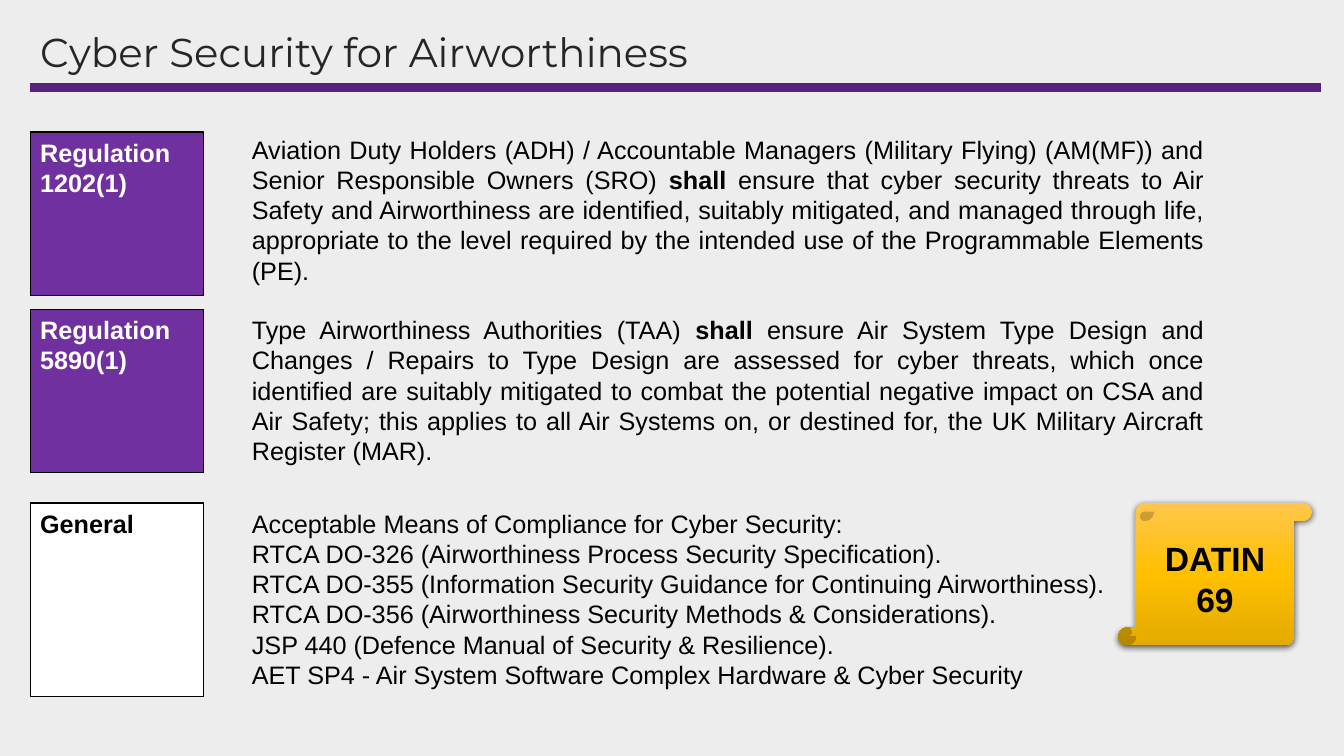
from dataclasses import dataclass

from pptx import Presentation
from pptx.dml.color import RGBColor as Rgb
from pptx.enum.shapes import MSO_CONNECTOR as Conn, MSO_SHAPE as Geo
from pptx.enum.text import MSO_ANCHOR as Anchor, MSO_AUTO_SIZE as Auto, PP_ALIGN as Align
from pptx.oxml import parse_xml
from pptx.oxml.ns import nsdecls
from pptx.shapes.autoshape import Shape
from pptx.slide import Slide
from pptx.util import Inches, Pt


@dataclass(frozen=True)
class Theme:
    back: str = "EDEDED"
    rule: str = "56227D"
    title: str = "262626"
    purple: str = "7030A0"
    white: str = "FFFFFF"
    black: str = "000000"
    gold: tuple[tuple[int, str], ...] = ((0, "FFC64B"), (50, "FFC000"), (100, "E3AB00"))
    head: str = "Montserrat"
    body: str = "Arial"
    big: float = 28.8
    mid: float = 24
    base: float = 18


@dataclass(frozen=True)
class Run:
    text: str
    bold: bool = False


@dataclass(frozen=True)
class Row:
    label: str
    fill: str
    ink: str
    top: float
    tall: float
    text_top: float
    text_wide: float
    text_tall: float
    paras: list[list[Run]]


THEME = Theme()
LEFT, TAG_WIDE, TEXT_LEFT, FULL = 0.3, 1.72, 2.4, 12.8

ROWS = [
    Row("Regulation 1202(1)", THEME.purple, THEME.white, 1.31, 1.62, 1.28, 9.64, 1.62, [[
        Run("Aviation Duty Holders (ADH) / Accountable Managers (Military Flying) (AM(MF)) "
            "and Senior Responsible Owners (SRO) "),
        Run("shall", True),
        Run(" ensure that cyber security threats to Air Safety and Airworthiness are "
            "identified, suitably mitigated, and managed through life, appropriate to the "
            "level required by the intended use of the Programmable Elements (PE)."),
    ]]),
    Row("Regulation 5890(1)", THEME.purple, THEME.white, 3.07, 1.62, 3.07, 9.64, 1.31, [[
        Run("Type Airworthiness Authorities (TAA) "),
        Run("shall", True),
        Run(" ensure Air System Type Design and Changes / Repairs to Type Design are "
            "assessed for cyber threats, which once identified are suitably mitigated to "
            "combat the potential negative impact on CSA and Air Safety; this applies to "
            "all Air Systems on, or destined for, the UK Military Aircraft Register (MAR)."),
    ]]),
    Row("General", THEME.white, THEME.black, 4.99, 1.92, 4.99, 10.04, 1.92, [
        [Run(line)] for line in (
            "Acceptable Means of Compliance for Cyber Security:",
            "RTCA DO-326 (Airworthiness Process Security Specification).",
            "RTCA DO-355 (Information Security Guidance for Continuing Airworthiness).",
            "RTCA DO-356 (Airworthiness Security Methods & Considerations).",
            "JSP 440 (Defence Manual of Security & Resilience).",
            "AET SP4 - Air System Software Complex Hardware & Cyber Security",
        )
    ]),
]


def write(shape: Shape, paras: list[list[Run]], ink: str, size: float = THEME.base,
          face: str = THEME.body, align: Align = Align.LEFT,
          anchor: Anchor = Anchor.TOP, lines: float = 1.0) -> None:
    frame = shape.text_frame
    frame.word_wrap = True
    frame.vertical_anchor = anchor
    for i, runs in enumerate(paras):
        para = frame.add_paragraph() if i else frame.paragraphs[0]
        para.alignment = align
        para.line_spacing = lines
        for item in runs:
            run = para.add_run()
            run.text = item.text
            run.font.color.rgb = Rgb.from_string(ink)
            for key, value in {"name": face, "size": Pt(size), "bold": item.bold}.items():
                setattr(run.font, key, value)


def add_title(slide: Slide) -> None:
    line = slide.shapes.add_connector(
        Conn.STRAIGHT, Inches(LEFT), Inches(0.87), Inches(LEFT + FULL), Inches(0.87))
    line.line.color.rgb = Rgb.from_string(THEME.rule)
    line.line.width = Pt(6)
    line._element.spPr.append(parse_xml(f"<a:effectLst {nsdecls('a')}/>"))
    box = slide.shapes.add_textbox(Inches(LEFT), Inches(0.28), Inches(FULL), Inches(0.53))
    write(box, [[Run("Cyber Security for Airworthiness")]], THEME.title, THEME.big,
          THEME.head, anchor=Anchor.MIDDLE, lines=0.9)


def add_row(slide: Slide, row: Row) -> None:
    tag = slide.shapes.add_shape(
        Geo.RECTANGLE, Inches(LEFT), Inches(row.top), Inches(TAG_WIDE), Inches(row.tall))
    tag.shadow.inherit = False
    tag.fill.solid()
    tag.fill.fore_color.rgb = Rgb.from_string(row.fill)
    tag.line.color.rgb = Rgb.from_string(THEME.black)
    tag.line.width = Pt(1)
    write(tag, [[Run(row.label, True)]], row.ink)
    box = slide.shapes.add_textbox(Inches(TEXT_LEFT), Inches(row.text_top),
                                   Inches(row.text_wide), Inches(row.text_tall))
    write(box, row.paras, THEME.black, align=Align.JUSTIFY)
    box.text_frame.auto_size = Auto.SHAPE_TO_FIT_TEXT


def add_scroll(slide: Slide) -> None:
    """Add the gold notice scroll with its gradient and soft shadow."""
    scroll = slide.shapes.add_shape(
        Geo.VERTICAL_SCROLL, Inches(11.09), Inches(4.99), Inches(1.92), Inches(1.41))
    scroll.line.fill.background()
    stops = "".join(f'<a:gs pos="{pos * 1000}"><a:srgbClr val="{tint}"/></a:gs>'
                    for pos, tint in THEME.gold)
    props = scroll._element.spPr
    props.insert(2, parse_xml(
        f'<a:gradFill {nsdecls("a")} rotWithShape="1"><a:gsLst>{stops}</a:gsLst>'
        '<a:lin ang="5400000" scaled="0"/></a:gradFill>'))
    props.append(parse_xml(
        f'<a:effectLst {nsdecls("a")}><a:outerShdw blurRad="{Pt(4.5)}" dist="{Pt(1.5)}" '
        f'dir="5400000" algn="ctr" rotWithShape="0"><a:srgbClr val="{THEME.black}">'
        '<a:alpha val="63000"/></a:srgbClr></a:outerShdw></a:effectLst>'))
    write(scroll, [[Run("DATIN 69", True)]], THEME.black, THEME.mid,
          align=Align.CENTER, anchor=Anchor.MIDDLE)


def main() -> None:
    deck = Presentation()
    deck.slide_width, deck.slide_height = Inches(13.33), Inches(7.5)
    slide = deck.slides.add_slide(deck.slide_layouts[6])
    slide.background.fill.solid()
    slide.background.fill.fore_color.rgb = Rgb.from_string(THEME.back)
    add_title(slide)
    for row in ROWS:
        add_row(slide, row)
    add_scroll(slide)
    deck.save("out.pptx")


if __name__ == "__main__":
    main()
